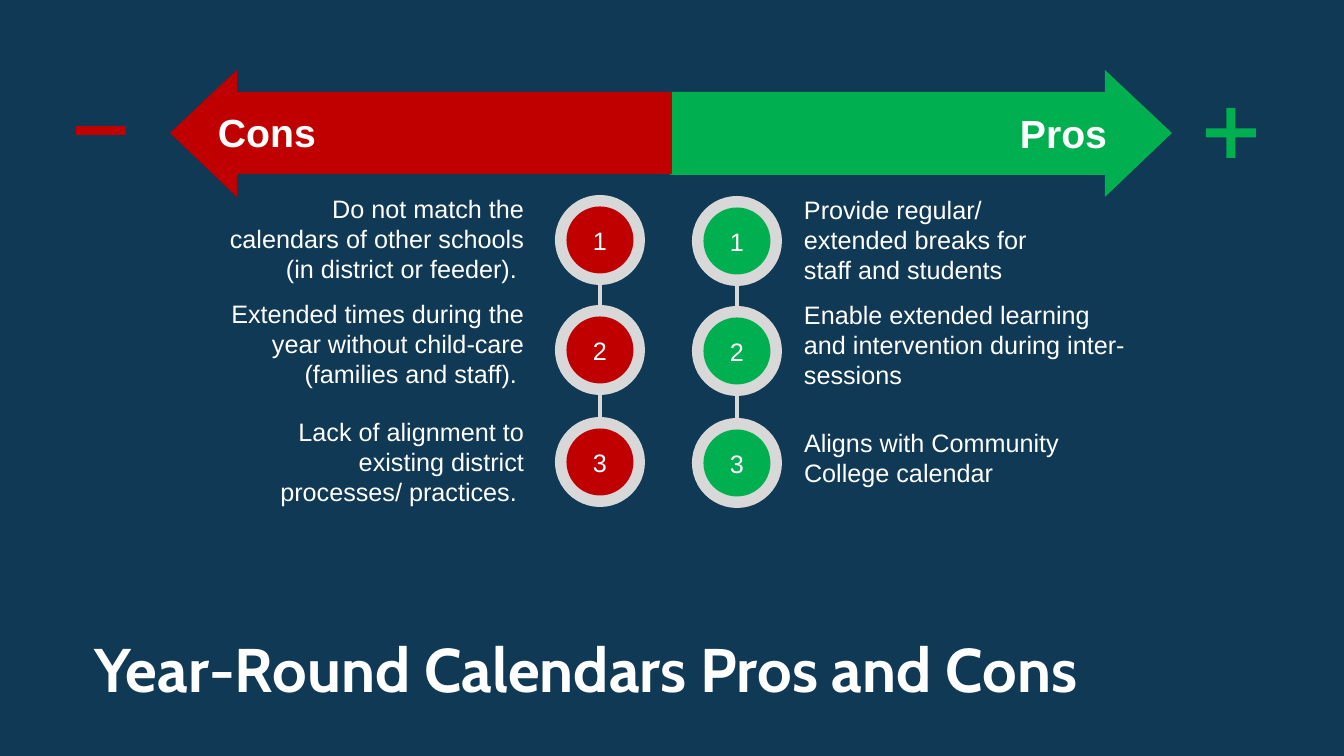
from lxml import etree
from pptx import Presentation, util as u
from pptx.dml.color import RGBColor
from pptx.enum import shapes, text
from pptx.oxml.ns import qn

NAVY, WHITE, GREY, GREEN, RED = "0F3955", "FFFFFF", "D8D8D8", "00B050", "C00000"
KIND, ALIGN, ANCHOR = shapes.MSO_SHAPE, text.PP_ALIGN, text.MSO_ANCHOR
RING, DISC = 90, 67
RING_OFFSETS = (0, 110, 222)

PROS = [
    ("Provide regular/ extended breaks for staff and students", (794, 189, 285, 102)),
    ("Enable extended learning and intervention during inter-sessions", (794, 294, 354, 102)),
    ("Aligns with Community College calendar", (794, 422, 318, 72)),
]
CONS = [
    ("Do not match the calendars of other schools (in district or feeder). ", (207, 188, 327, 102)),
    ("Extended times during the year without child-care (families and staff). ", (191, 293, 343, 102)),
    ("Lack of alignment to existing district processes/ practices. ", (249, 411, 285, 102)),
]


def px(n):
    """Turn pixels at 100.8 to the inch into EMU."""
    return u.Emu(round(n * 914400 / 100.8))


def rgb(code):
    """Turn a hex string into a colour."""
    return RGBColor.from_string(code)


def paint(sp, color):
    """Give a shape a flat fill with no outline or shadow."""
    sp.shadow.inherit = False
    sp.fill.solid()
    sp.fill.fore_color.rgb = rgb(color)
    sp.line.fill.background()


def write(sp, words, size, bold=False, align=ALIGN.LEFT, anchor=ANCHOR.TOP, font="Arial", insets=(10, 5, 10, 5)):
    """Put one white paragraph into a shape or text box."""
    tf = sp.text_frame
    tf.word_wrap = True
    tf.vertical_anchor = anchor
    tf.margin_left, tf.margin_top, tf.margin_right, tf.margin_bottom = map(px, insets)
    p = tf.paragraphs[0]
    p.text = words
    p.alignment = align
    p.font.name, p.font.size, p.font.bold = font, u.Pt(size), bold
    p.font.color.rgb = rgb(WHITE)
    return p


def add_block(s, kind, box, color):
    """Add a plain filled preset shape."""
    sp = s.shapes.add_shape(kind, *map(px, box))
    paint(sp, color)
    return sp


def add_text(s, words, box, size, **style):
    """Add a text box."""
    return write(s.shapes.add_textbox(*map(px, box)), words, size, **style)


def add_arrow(s, bar, tip, base, color, label, label_box):
    """Add a labelled banner with a triangular head."""
    add_block(s, KIND.RECTANGLE, bar, color)
    middle = bar[1] + bar[3] // 2
    head = s.shapes.build_freeform(px(base), px(middle - 63))
    head.add_line_segments([(px(tip), px(middle)), (px(base), px(middle + 64))])
    paint(head.convert_to_shape(), color)
    write(add_block(s, KIND.RECTANGLE, label_box, color), label, 28, bold=True)


def add_chain(s, left, top, color):
    """Add three numbered discs in grey rings joined by a line."""
    for dy in RING_OFFSETS:
        add_block(s, KIND.OVAL, (left, top + dy, RING, RING), GREY)
    x, y = left + RING // 2, top + RING // 2
    link = s.shapes.add_connector(shapes.MSO_CONNECTOR.STRAIGHT, px(x), px(y), px(x), px(y + RING_OFFSETS[-1]))
    link.line.color.rgb = rgb(GREY)
    link.line.width = u.Pt(2.25)
    etree.SubElement(link._element.spPr, qn("a:effectLst"))
    inset = (RING - DISC) / 2
    for number, dy in enumerate(RING_OFFSETS, 1):
        disc = add_block(s, KIND.OVAL, (left + inset, top + dy + inset, DISC, DISC), color)
        write(disc, str(number), 18, align=ALIGN.CENTER, anchor=ANCHOR.MIDDLE, insets=(10, 10, 10, 10))


def add_points(s, points, align):
    """Add the statements of one side."""
    for words, box in points:
        add_text(s, words, box, 18, align=align)


def main():
    """Build the slide and save it."""
    prs = Presentation()
    prs.slide_width, prs.slide_height = px(1344), px(756)
    s = prs.slides.add_slide(prs.slide_layouts[6])
    s.background.fill.solid()
    s.background.fill.fore_color.rgb = rgb(NAVY)

    title = add_text(s, "Year-Round Calendars Pros and Cons", (94, 627, 1162, 91), 44, bold=True,
                     anchor=ANCHOR.MIDDLE, font="Cabin", insets=(0, 5, 10, 5))
    title.line_spacing = 0.9

    add_arrow(s, (670, 92, 437, 83), 1172, 1105, GREEN, "Pros", (1010, 104, 109, 57))
    plus = add_block(s, KIND.CROSS, (1206, 108, 50, 50), GREEN)
    plus.adjustments[0] = 0.41
    add_chain(s, 692, 196, GREEN)
    add_points(s, PROS, ALIGN.LEFT)

    add_arrow(s, (236, 92, 436, 82), 170, 237, RED, "Cons", (208, 103, 120, 57))
    add_block(s, KIND.RECTANGLE, (76, 126, 50, 9), RED)
    add_chain(s, 555, 195, RED)
    add_points(s, CONS, ALIGN.RIGHT)

    prs.save("out.pptx")


if __name__ == "__main__":
    main()
